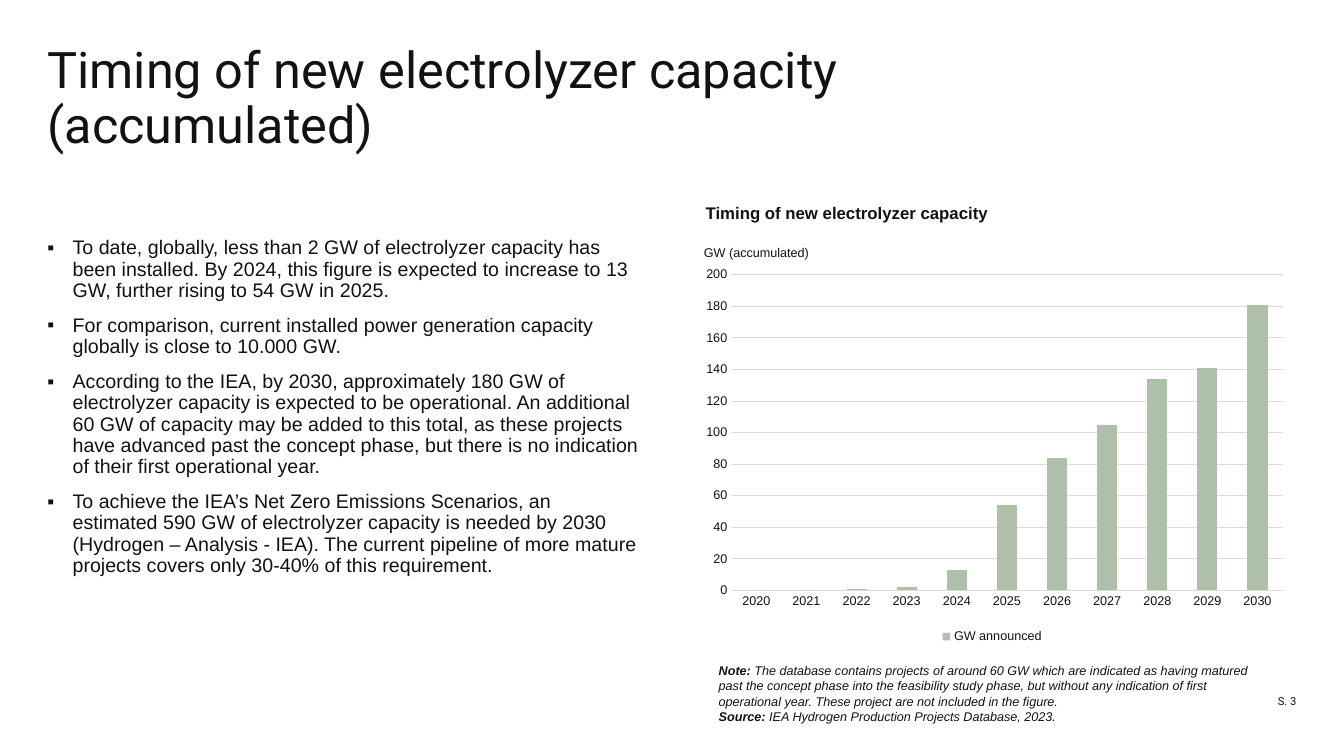
from lxml import etree
from pptx import Presentation
from pptx.chart.data import CategoryChartData
from pptx.dml.color import RGBColor
from pptx.enum.chart import XL_CHART_TYPE as ChartType, XL_LEGEND_POSITION as LegendPosition
from pptx.enum.chart import XL_TICK_MARK as TickMark
from pptx.enum.text import MSO_ANCHOR as Anchor, MSO_AUTO_SIZE as AutoSize, PP_ALIGN as Align
from pptx.oxml.ns import qn
from pptx.util import Inches, Pt

INK = RGBColor(0x12, 0x12, 0x12)
GRID = RGBColor(0xDB, 0xDB, 0xDB)
SAGE = RGBColor(0xAF, 0xC0, 0xAA)

LEFT, RIGHT = 0.47, 6.9
COLUMN_WIDTH = 5.88
CONTENT_TOP = 2.36


def style(font, size, name="Arial", bold=False, italic=False):
    font.size, font.name = Pt(size), name
    font.bold, font.italic = bold, italic
    font.color.rgb = INK


def set_layout(parent, index, **values):
    """Give a chart part a manual layout, in shares of the chart area."""
    for old in parent.findall(qn("c:layout")):
        parent.remove(old)
    layout = etree.Element(qn("c:layout"))
    parent.insert(index, layout)
    manual = etree.SubElement(layout, qn("c:manualLayout"))
    for tag, value in values.items():
        etree.SubElement(manual, qn(f"c:{tag}")).set("val", str(value))


presentation = Presentation()
presentation.slide_width = Inches(13.33)
presentation.slide_height = Inches(7.5)
slide = presentation.slides.add_slide(presentation.slide_layouts[5])

# Title
title = slide.shapes.title
title.left, title.top = Inches(LEFT), Inches(0.47)
title.width, title.height = Inches(9.86), Inches(1.06)
title.text_frame.text = "Timing of new electrolyzer capacity (accumulated)"
title_paragraph = title.text_frame.paragraphs[0]
title_paragraph.alignment = Align.LEFT
title_paragraph.line_spacing = 0.9
style(title_paragraph.runs[0].font, 36, "Roboto")

# Text boxes
frames = {}
for name, left, top, width, height, inset in (
    ("bullets", LEFT, CONTENT_TOP, COLUMN_WIDTH, 3.32, False),
    ("page", 11.83, 6.63, 1.03, 0.39, False),
    ("note", 7.03, 6.53, 5.59, 0.86, True),
    ("heading", RIGHT, 1.96, 6.4, 0.3, True),
):
    box = slide.shapes.add_textbox(Inches(left), Inches(top), Inches(width), Inches(height))
    frames[name] = box.text_frame
    frames[name].word_wrap = True
    if not inset:
        box.text_frame.margin_left = box.text_frame.margin_right = 0
        box.text_frame.margin_top = box.text_frame.margin_bottom = 0

title.text_frame.margin_left = title.text_frame.margin_right = 0
title.text_frame.margin_top = title.text_frame.margin_bottom = 0
title.text_frame.auto_size = AutoSize.NONE
title.text_frame.vertical_anchor = Anchor.BOTTOM

# Bullets
frames["bullets"].text = "\n".join((
    "To date, globally, less than 2 GW of electrolyzer capacity has been installed. "
    "By 2024, this figure is expected to increase to 13 GW, further rising to 54 GW in 2025.",
    "For comparison, current installed power generation capacity globally is close to 10.000 GW.",
    "According to the IEA, by 2030, approximately 180 GW of electrolyzer capacity is expected "
    "to be operational. An additional 60 GW of capacity may be added to this total, as these "
    "projects have advanced past the concept phase, but there is no indication of their first "
    "operational year.",
    "To achieve the IEA’s Net Zero Emissions Scenarios, an estimated 590 GW of electrolyzer "
    "capacity is needed by 2030 (Hydrogen – Analysis - IEA). The current pipeline of more "
    "mature projects covers only 30-40% of this requirement.",
))
for number, paragraph in enumerate(frames["bullets"].paragraphs):
    properties = paragraph._p.get_or_add_pPr()
    properties.set("marL", str(Inches(0.25)))
    properties.set("indent", str(-Inches(0.25)))
    etree.SubElement(properties, qn("a:buFont")).set("typeface", "Arial")
    etree.SubElement(properties, qn("a:buChar")).set("char", "▪")
    paragraph.line_spacing = 0.9
    paragraph.space_before = Pt(10 if number else 0)
    style(paragraph.runs[0].font, 14)

# Page number and chart heading
frames["page"].text = "S. 3"
frames["page"].vertical_anchor = Anchor.BOTTOM
frames["page"].paragraphs[0].alignment = Align.RIGHT
style(frames["page"].paragraphs[0].runs[0].font, 8, "Roboto")

frames["heading"].text = "Timing of new electrolyzer capacity"
style(frames["heading"].paragraphs[0].runs[0].font, 12, bold=True)

# Note and source
notes = (
    ("Note: ", "The database contains projects of around 60 GW which are indicated as having "
     "matured past the concept phase into the feasibility study phase, but without any "
     "indication of first operational year. These project are not included in the figure."),
    ("Source:", " IEA Hydrogen Production Projects Database, 2023."),
)
frames["note"].text = "\n".join(label for label, _ in notes)
for paragraph, (_, wording) in zip(frames["note"].paragraphs, notes):
    style(paragraph.runs[0].font, 9, bold=True, italic=True)
    run = paragraph.add_run()
    run.text = wording
    style(run.font, 9, italic=True)

# Chart
data = CategoryChartData()
data.categories = [str(year) for year in range(2020, 2031)]
data.add_series("GW announced", (0, 0, 1, 2, 13, 54, 84, 105, 134, 141, 181))
chart = slide.shapes.add_chart(
    ChartType.COLUMN_CLUSTERED, Inches(RIGHT), Inches(CONTENT_TOP),
    Inches(COLUMN_WIDTH), Inches(4.07), data).chart
style(chart.font, 10)
chart.has_title = False
chart.has_legend = True
chart.legend.position = LegendPosition.BOTTOM
chart.legend.include_in_layout = False
style(chart.legend.font, 9)

plot = chart.plots[0]
plot.gap_width = 150
plot.vary_by_categories = False
plot.series[0].format.fill.solid()
plot.series[0].format.fill.fore_color.rgb = SAGE
set_layout(chart._chartSpace.chart.plotArea, 0, layoutTarget="inner", xMode="edge",
           yMode="edge", x=0.06, y=0.09, w=0.93, h=0.77)

years, capacity = chart.category_axis, chart.value_axis
for axis in (years, capacity):
    axis.major_tick_mark = axis.minor_tick_mark = TickMark.NONE
    style(axis.tick_labels.font, 9)
capacity.minimum_scale, capacity.maximum_scale, capacity.major_unit = 0, 200, 20
capacity.tick_labels.number_format = "#,##0"
capacity.tick_labels.number_format_is_linked = False
capacity.format.line.fill.background()
for line in (years.format.line, capacity.major_gridlines.format.line):
    line.color.rgb = GRID
    line.width = Pt(0.75)

axis_title = capacity.axis_title
axis_title.text_frame.text = "GW (accumulated)"
style(axis_title.text_frame.paragraphs[0].runs[0].font, 9)
direction = axis_title.text_frame._txBody.find(qn("a:bodyPr"))
direction.set("rot", "0")
direction.set("vert", "horz")
set_layout(axis_title._element, 1, xMode="edge", yMode="edge", x=0.01, y=0.01)

presentation.save("out.pptx")
